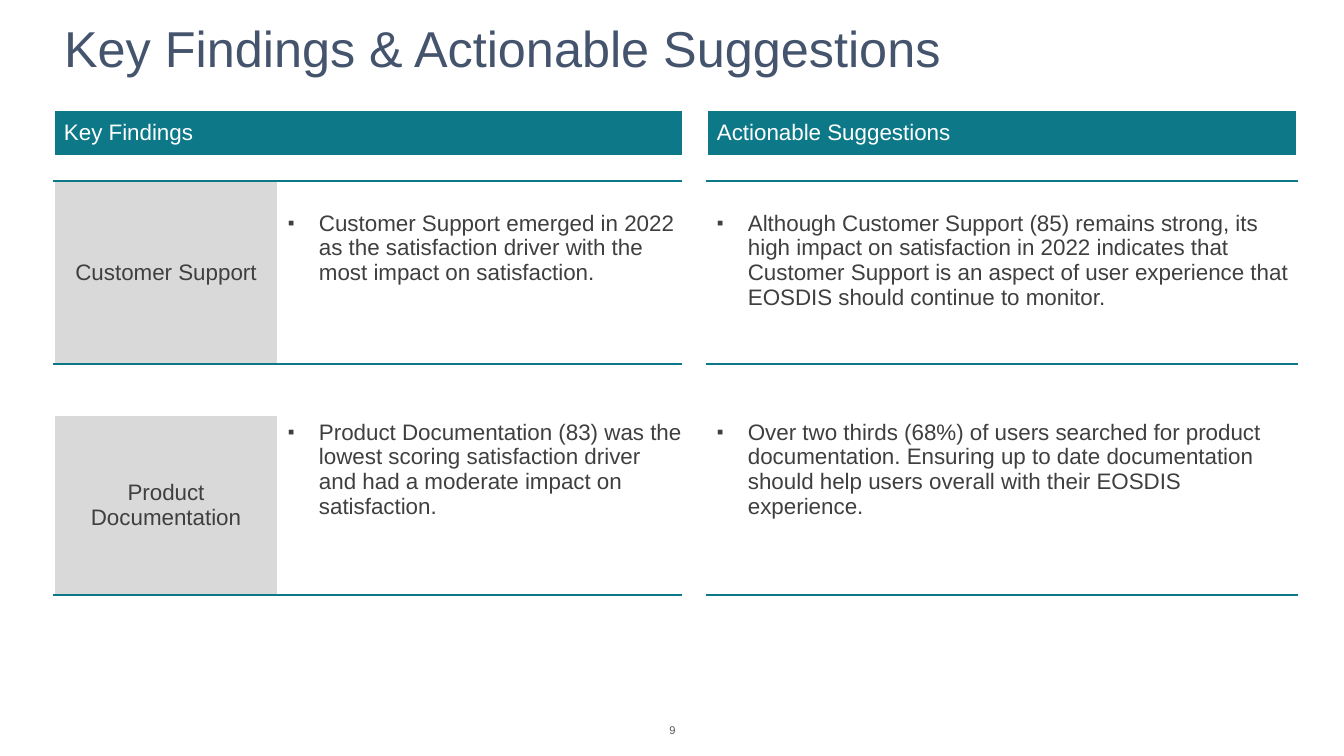
from lxml.etree import SubElement
from pptx import Presentation
from pptx.dml.color import RGBColor
from pptx.enum.text import MSO_ANCHOR as Anchor, MSO_AUTO_SIZE as AutoSize, PP_ALIGN as Align
from pptx.oxml.ns import qn
from pptx.util import Pt

PX = 9071  # EMU per px at 100.8 px to the inch
COLORS = {"title": "45546D", "teal": "0D7988", "label": "D9D9D9",
          "ink": "3F3F3F", "white": "FFFFFF", "number": "595959"}
FONT = "Arial"
COLUMNS = [224, 405, 24, 590]
ROWS = [46, 25, 183, 51, 180]
HEADER, GAP_COLUMN = 0, 2
RULES = {1: 2.25, 2: 1.5, 4: 2.25}  # row above the teal rule: width in points

CONTENT = {
    (0, 0): "Key Findings",
    (0, 3): "Actionable Suggestions",
    (2, 0): "Customer Support",
    (2, 1): "Customer Support emerged in 2022 as the satisfaction driver with the "
            "most impact on satisfaction.",
    (2, 3): "Although Customer Support (85) remains strong, its high impact on "
            "satisfaction in 2022 indicates that Customer Support is an aspect of user "
            "experience that EOSDIS should continue to monitor.",
    (4, 0): "Product Documentation",
    (4, 1): "Product Documentation (83) was the lowest scoring satisfaction driver "
            "and had a moderate impact on satisfaction.",
    (4, 3): "Over two thirds (68%) of users searched for product documentation. "
            "Ensuring up to date documentation should help users overall with their "
            "EOSDIS experience.",
}
# margins are left, top, right, bottom
FORMATS = {
    "header": dict(fill="teal", color="white", anchor=Anchor.MIDDLE, align=Align.LEFT,
                   margins=(10, 0, 0, 0)),
    "label": dict(fill="label", color="ink", anchor=Anchor.MIDDLE, align=Align.CENTER,
                  margins=(0, 5, 0, 5)),
    "finding": dict(fill=None, color="ink", anchor=Anchor.TOP, align=Align.LEFT,
                    margins=(10, 5, 0, 5)),
}


def write(paragraph, text, size, color, align):
    paragraph.alignment = align
    run = paragraph.add_run()
    run.text = text
    for name, value in dict(name=FONT, size=Pt(size)).items():
        setattr(run.font, name, value)
    run.font.color.rgb = RGBColor.from_string(COLORS[color])


def add_border(cell, side, color, width):
    """Draw one edge (L, R, T or B) of a cell; call before setting its fill."""
    line = SubElement(cell._tc.get_or_add_tcPr(), qn(f"a:ln{side}"), w=str(Pt(width)))
    SubElement(SubElement(line, qn("a:solidFill")), qn("a:srgbClr"), val=COLORS[color])


prs = Presentation()
prs.slide_width, prs.slide_height = 1344 * PX, 756 * PX
slide = prs.slides.add_slide(prs.slide_layouts[5])

title = slide.shapes.title
for side, length in dict(left=54, top=0, width=1243, height=102).items():
    setattr(title, side, length * PX)
heading = title.text_frame
heading.auto_size = AutoSize.NONE
heading.vertical_anchor = Anchor.MIDDLE
heading.paragraphs[0].line_spacing = 0.9
write(heading.paragraphs[0], "Key Findings & Actionable Suggestions", 36, "title", Align.LEFT)

table = slide.shapes.add_table(len(ROWS), len(COLUMNS), 54 * PX, 110 * PX,
                               sum(COLUMNS) * PX, sum(ROWS) * PX).table
table.first_row = table.horz_banding = False
for column, width in zip(table.columns, COLUMNS):
    column.width = width * PX
for row, height in zip(table.rows, ROWS):
    row.height = height * PX
table.cell(HEADER, 0).merge(table.cell(HEADER, 1))

for r in range(len(ROWS)):
    for c in range(len(COLUMNS)):
        cell = table.cell(r, c)
        add_border(cell, "L", "white", 2.25 if c == 1 else 1)
        add_border(cell, "R", "white", 2.25 if c == 0 else 1)
        for side, row_above in (("T", r - 1), ("B", r)):
            ruled = row_above in RULES and c != GAP_COLUMN
            add_border(cell, side, "teal" if ruled else "white",
                       RULES[row_above] if ruled else 1)

        kind = "header" if r == HEADER else "label" if c == 0 else "finding"
        style = FORMATS[kind]
        text = CONTENT.get((r, c))
        if text and style["fill"]:
            cell.fill.solid()
            cell.fill.fore_color.rgb = RGBColor.from_string(COLORS[style["fill"]])
        else:
            cell.fill.background()

        paragraph = cell.text_frame.paragraphs[0]
        for side, margin in zip(("left", "top", "right", "bottom"), style["margins"]):
            setattr(cell, f"margin_{side}", margin * PX if text else 0)
        if not text:
            SubElement(paragraph._p, qn("a:endParaRPr"), sz="800")
            continue
        cell.vertical_anchor = style["anchor"]
        if kind == "finding":
            if r == 2:
                cell.margin_top = 30 * PX
            props = paragraph._p.get_or_add_pPr()
            props.set("marL", str(31 * PX))
            props.set("indent", str(-31 * PX))
            SubElement(SubElement(props, qn("a:buClr")), qn("a:srgbClr"), val=COLORS["ink"])
            SubElement(props, qn("a:buSzPct"), val="85000")
            SubElement(props, qn("a:buFont"), typeface=FONT)
            SubElement(props, qn("a:buChar"), char="▪")
        write(paragraph, text, 16, style["color"], style["align"])

page_number = slide.shapes.add_textbox(633 * PX, 718 * PX, 79 * PX, 24 * PX).text_frame
page_number.word_wrap = True
write(page_number.paragraphs[0], "9", 8, "number", Align.CENTER)

prs.save("out.pptx")
